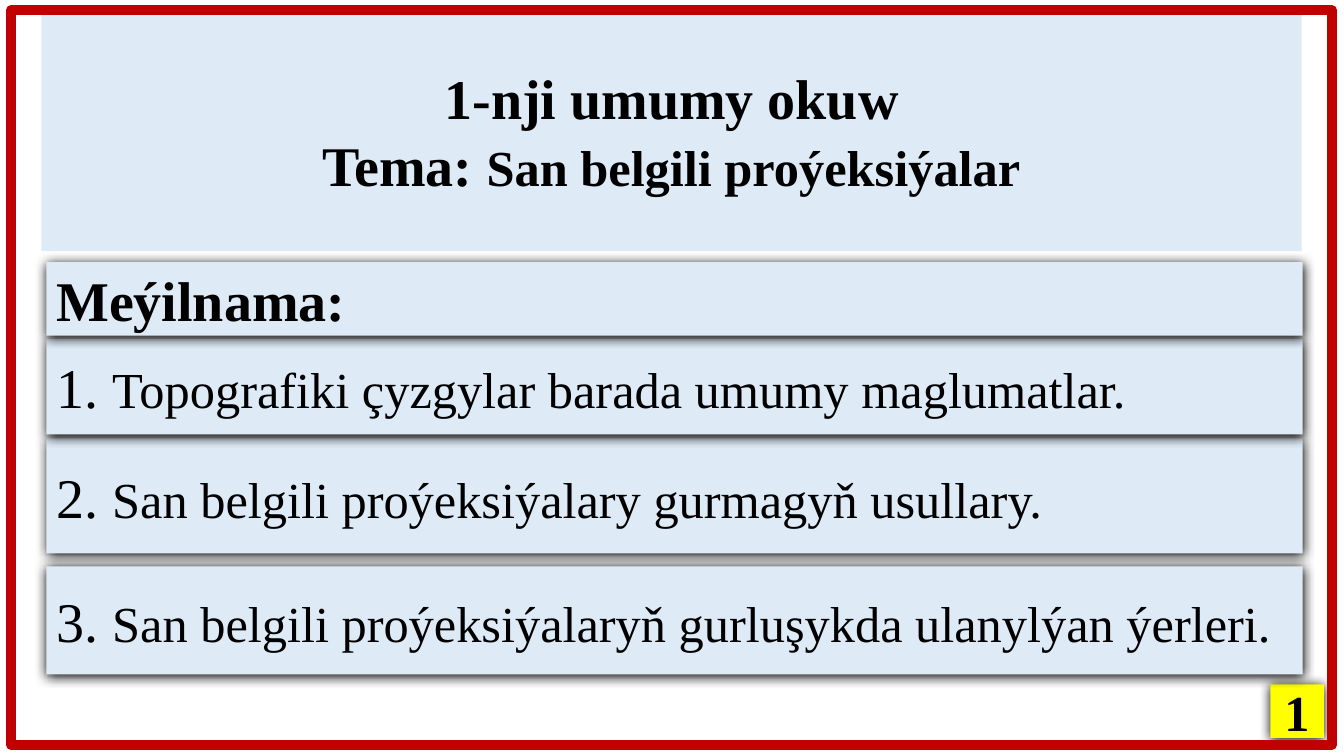
from lxml import etree
from pptx import Presentation
from pptx.dml.color import RGBColor
from pptx.enum.shapes import MSO_SHAPE
from pptx.enum.text import MSO_ANCHOR, PP_ALIGN
from pptx.oxml.ns import qn
from pptx.util import Pt

RECTANGLE, ROUNDED, PLATE = MSO_SHAPE.RECTANGLE, MSO_SHAPE.ROUNDED_RECTANGLE, MSO_SHAPE.PENTAGON
MIDDLE = MSO_ANCHOR.MIDDLE
LEFT, CENTER = PP_ALIGN.LEFT, PP_ALIGN.CENTER
PX = 9144  # 100 px to the inch
COLORS = {"panel": "DEEBF7", "badge": "FFFF00", "frame": "C00000", "ink": "000000"}
FONT = "Times New Roman"
LARGE, MEDIUM = 40, 36


def add_box(shapes, kind, area, color, lines, align, bold, shadow):
    """Add a filled box; each line is a list of (text, size) spans."""
    box = shapes.add_shape(kind, *[length * PX for length in area])
    if kind != RECTANGLE:
        box.adjustments[0] = 0
    box.fill.solid()
    box.fill.fore_color.rgb = RGBColor.from_string(COLORS[color])
    box.line.fill.background()
    box.shadow.inherit = False
    if shadow:
        effects = box._element.spPr.find(qn("a:effectLst"))
        outer = etree.SubElement(effects, qn("a:outerShdw"), blurRad=str(Pt(8.5)),
                                 dist=str(Pt(1)), dir="5400000", algn="t", rotWithShape="0")
        etree.SubElement(outer, qn("a:srgbClr"), val=COLORS["ink"])
    frame = box.text_frame
    frame.word_wrap = True
    frame.vertical_anchor = MIDDLE
    for index, line in enumerate(lines):
        para = frame.add_paragraph() if index else frame.paragraphs[0]
        para.alignment = align
        for text, size in line:
            span = para.add_run()
            span.text = text
            font_values = {"name": FONT, "size": Pt(size), "bold": bold}
            for name, value in font_values.items():
                setattr(span.font, name, value)
            span.font.color.rgb = RGBColor.from_string(COLORS["ink"])


deck = Presentation()
deck.slide_width, deck.slide_height = 1333 * PX, 750 * PX
page = deck.slides.add_slide(deck.slide_layouts[6])

# Page number badge
add_box(page.shapes, RECTANGLE, (1260, 679, 53, 53), "badge",
        [[("1", MEDIUM)]], CENTER, True, True)

# Lecture title
title = [
    [("1-nji umumy okuw", LARGE)],
    [("Tema: ", LARGE), ("San belgili proýeksiýalar", MEDIUM)],
]
add_box(page.shapes, ROUNDED, (41, 10, 1250, 239), "panel", title, CENTER, True, False)

# Plan: heading and three topics, stacked so that upper cards shade lower ones
plan = page.shapes.add_group_shape()
cards = [
    (435, 114, "2. ", "San belgili proýeksiýalary gurmagyň usullary."),
    (336, 95, "1. ", "Topografiki çyzgylar barada umumy maglumatlar."),
    (260, 73, "Meýilnama:", ""),
    (562, 107, "3. ", "San belgili proýeksiýalaryň gurluşykda ulanylýan ýerleri."),
]
for top, height, lead, topic in cards:
    spans = [(lead, LARGE)] + ([(topic, MEDIUM)] if topic else [])
    add_box(plan.shapes, PLATE, (46, top, 1246, height), "panel",
            [spans], LEFT, not topic, True)

# Slide frame with rounded corners on its line
border = page.shapes.add_shape(RECTANGLE, 11 * PX, 10 * PX, 1310 * PX, 729 * PX)
border.fill.background()
border.shadow.inherit = False
border.line.color.rgb = RGBColor.from_string(COLORS["frame"])
border.line.width = Pt(7)
etree.SubElement(border._element.spPr.find(qn("a:ln")), qn("a:round"))

deck.save("out.pptx")
